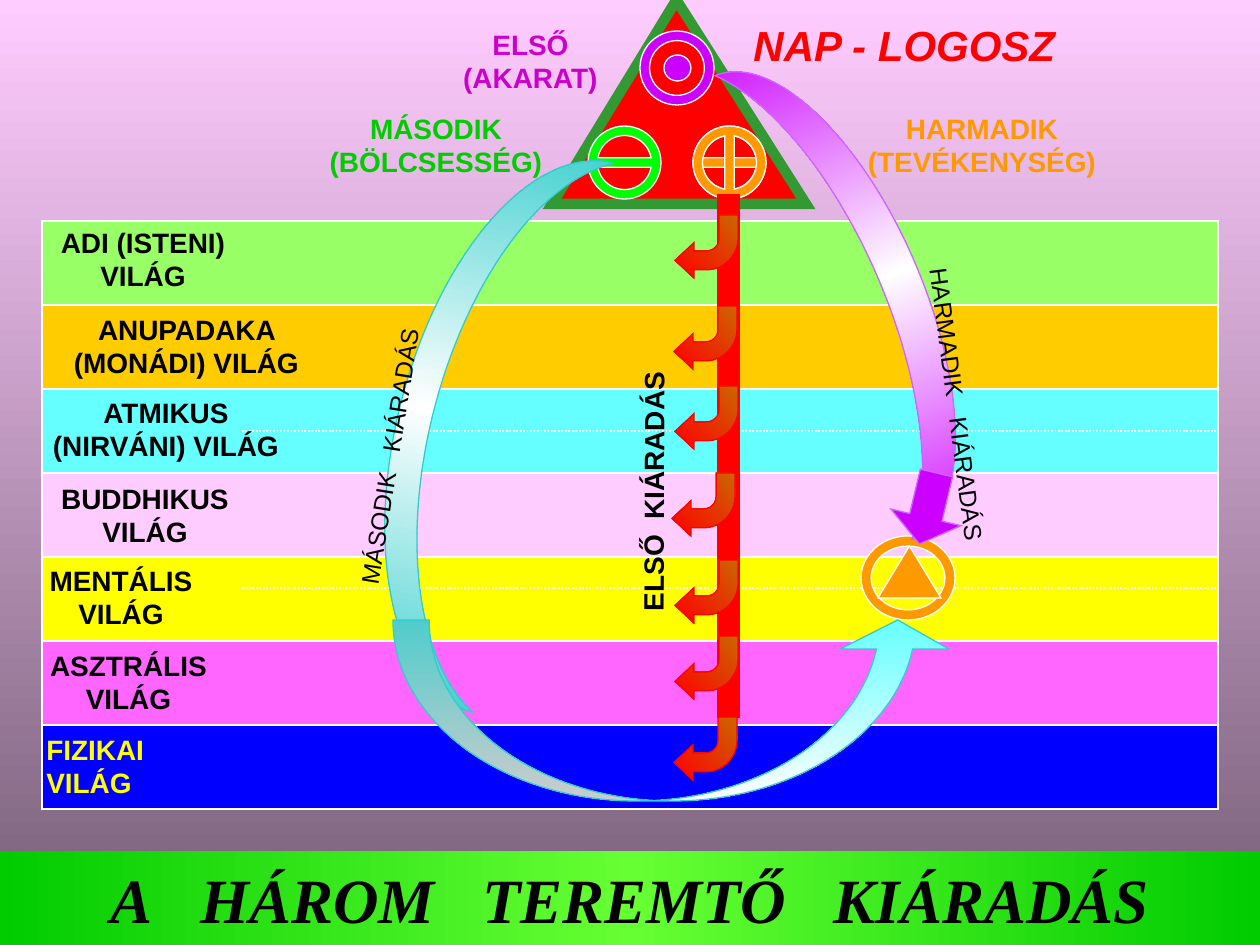
from lxml.etree import SubElement
from pptx import Presentation
from pptx.dml.color import RGBColor as RGB
from pptx.enum.dml import MSO_LINE
from pptx.enum.shapes import MSO_CONNECTOR, MSO_SHAPE as SHAPE
from pptx.enum.text import MSO_ANCHOR, PP_ALIGN as ALIGN
from pptx.oxml.ns import qn
from pptx.util import Pt

EMU_PER_PX = 914400 / 126

BLACK = RGB(0x00, 0x00, 0x00)
WHITE = RGB(0xFF, 0xFF, 0xFF)
RED = RGB(0xFF, 0x00, 0x00)
BROWN = RGB(0xCC, 0x66, 0x00)
ORANGE = RGB(0xFF, 0x99, 0x00)
AMBER = RGB(0xFF, 0xCC, 0x00)
YELLOW = RGB(0xFF, 0xFF, 0x00)
LIME = RGB(0x99, 0xFF, 0x66)
NEON = RGB(0x00, 0xFF, 0x00)
GREEN = RGB(0x00, 0xCC, 0x00)
BRIGHT_GREEN = RGB(0x66, 0xFF, 0x33)
FOREST = RGB(0x33, 0x99, 0x33)
AQUA = RGB(0x66, 0xFF, 0xFF)
TEAL = RGB(0x33, 0xCC, 0xCC)
BLUE = RGB(0x00, 0x00, 0xFF)
PINK = RGB(0xFF, 0xCC, 0xFF)
MAGENTA = RGB(0xFF, 0x66, 0xFF)
PURPLE = RGB(0xCC, 0x00, 0xCC)
VIOLET = RGB(0xCC, 0x00, 0xFF)
LILAC = RGB(0xCC, 0x66, 0xFF)
DUSK = RGB(0x76, 0x5E, 0x76)


def px(length):
    return round(length * EMU_PER_PX)


def write_text(frame, text, size=16, color=BLACK, font="Arial", bold=True,
               italic=False, align=ALIGN.CENTER, gap=0):
    paragraph = frame.paragraphs[0]
    paragraph.alignment = align
    pieces = text.replace(" ", "| |").split("|") if gap else [text]
    for piece in pieces:
        run = paragraph.add_run()
        run.text = piece
        run.font.name = font
        run.font.size = Pt(size)
        run.font.bold = bold
        run.font.italic = italic
        run.font.color.rgb = color
        if piece == " ":
            run.font._element.set("spc", str(round(gap * 100)))


def paint_gradient(fill, element, colors, angle):
    fill.gradient()
    fill.gradient_angle = -angle % 360
    stops = element.xpath(".//a:gsLst")[0]
    for stop in list(stops):
        stops.remove(stop)
    for index, color in enumerate(colors):
        position = round(100000 * index / (len(colors) - 1))
        stop = SubElement(stops, qn("a:gs"), pos=str(position))
        SubElement(stop, qn("a:srgbClr"), val=str(color))


class Board:
    def __init__(self, deck):
        self.slide = deck.slides.add_slide(deck.slide_layouts[6])
        self.shapes = self.slide.shapes
        self.outline = WHITE
        self.hairline = 0.75

    def background(self, *colors):
        paint_gradient(self.slide.background.fill, self.slide._element, colors, 90)

    def shape(self, kind, box, *colors, angle=90, line=None, width=None,
              rotation=0, adjust=(), mirrored=False):
        shape = self.shapes.add_shape(kind, *map(px, box))
        shape.shadow.inherit = False
        shape.rotation = rotation
        for index, value in enumerate(adjust):
            shape.adjustments[index] = value
        if mirrored:
            shape._element.spPr.find(qn("a:xfrm")).set("flipH", "1")
        if len(colors) > 1:
            paint_gradient(shape.fill, shape._element, colors, angle)
        else:
            shape.fill.solid()
            shape.fill.fore_color.rgb = colors[0]
        shape.line.color.rgb = line or self.outline
        shape.line.width = Pt(width or self.hairline)
        SubElement(shape._element.spPr.find(qn("a:ln")), qn("a:miter"), lim="800000")
        return shape

    def label(self, text, box, rotation=0, wrap=True, indent=0, **style):
        label = self.shapes.add_textbox(*map(px, box))
        label.rotation = rotation
        frame = label.text_frame
        frame.word_wrap = wrap
        if indent:
            frame.margin_left = px(indent)
        write_text(frame, text, **style)

    def dotted_line(self, left, right, y):
        line = self.shapes.add_connector(MSO_CONNECTOR.STRAIGHT,
                                         px(left), px(y), px(right), px(y))
        line.line.color.rgb = self.outline
        line.line.width = Pt(1)
        line.line.dash_style = MSO_LINE.ROUND_DOT
        SubElement(line._element.spPr, qn("a:effectLst"))

    def banner(self, text, box, *colors, **style):
        banner = self.shape(SHAPE.RECTANGLE, box, *colors, angle=0)
        banner.line.fill.background()
        banner.text_frame.vertical_anchor = MSO_ANCHOR.MIDDLE
        banner.text_frame.word_wrap = True
        write_text(banner.text_frame, text, **style)


def draw_worlds(board):
    worlds = [
        ("ADI (ISTENI) VILÁG", LIME, (34, 219, 218)),
        ("ANUPADAKA (MONÁDI) VILÁG", AMBER, (34, 306, 305)),
        ("ATMIKUS (NIRVÁNI) VILÁG", AQUA, (35, 389, 262)),
        ("BUDDHIKUS VILÁG", PINK, (38, 475, 214)),
        ("MENTÁLIS VILÁG", YELLOW, (33, 557, 176)),
        ("ASZTRÁLIS VILÁG", MAGENTA, (34, 642, 189)),
        ("FIZIKAI VILÁG", BLUE, (34, 726, 189)),
    ]
    band = 84
    for index, (name, color, place) in enumerate(worlds):
        board.shape(SHAPE.RECTANGLE,
                    (42, 221 + band * index, 1176, band * (len(worlds) - index)), color)
    for y in (431, 588):
        board.dotted_line(242, 1218, y)
    for name, color, place in worlds:
        lowest = color == BLUE
        board.label(name, (*place, 81), color=YELLOW if lowest else BLACK,
                    align=ALIGN.LEFT if lowest else ALIGN.CENTER)


def draw_logos(board):
    board.shape(SHAPE.ISOSCELES_TRIANGLE, (552, 0, 254, 204), RED,
                line=FOREST, width=6, adjust=[0.49])
    board.shape(SHAPE.DONUT, (640, 31, 74, 74), VIOLET, adjust=[0.13])
    board.shape(SHAPE.OVAL, (664, 55, 27, 26), VIOLET)
    for left, color, rotation in ((588, NEON, 315), (693, ORANGE, 315), (693, ORANGE, 225)):
        board.shape(SHAPE.NO_SYMBOL, (left, 126, 73, 73), color,
                    rotation=rotation, adjust=[0.13])
    board.shape(SHAPE.DONUT, (861, 536, 94, 84), ORANGE, adjust=[0.12])
    board.shape(SHAPE.ISOSCELES_TRIANGLE, (878, 546, 63, 52), ORANGE)
    board.label("ELSŐ (AKARAT)", (441, 21, 179, 81), color=PURPLE)
    board.label("MÁSODIK (BÖLCSESSÉG)", (315, 105, 242, 81), color=GREEN)
    board.label("HARMADIK (TEVÉKENYSÉG)", (851, 105, 262, 81), color=ORANGE)
    board.label("NAP - LOGOSZ", (741, 13, 373, 63), size=24, color=RED,
                italic=True, align=ALIGN.LEFT)


def draw_outpourings(board):
    board.shape(SHAPE.MOON, (809, 34, 111, 504), VIOLET, WHITE, VIOLET, line=LILAC,
                rotation=337, adjust=[0.36], mirrored=True)
    board.shape(SHAPE.DOWN_ARROW, (892, 472, 72, 73), VIOLET, line=LILAC,
                rotation=13.4, adjust=[0.46, 0.38])
    board.shape(SHAPE.MOON, (399, 136, 147, 567), TEAL, WHITE, TEAL, line=TEAL,
                rotation=14.4, adjust=[0.23])
    board.shape(SHAPE.CURVED_RIGHT_ARROW, (582, 431, 181, 559), AQUA, WHITE, angle=180,
                line=TEAL, rotation=270, adjust=[0.2, 0.6, 0.16])

    board.shape(SHAPE.RECTANGLE, (718, 195, 21, 522), RED, line=RED)
    branches = [(675, 215), (674, 306), (675, 386), (672, 473),
                (675, 560), (675, 636), (674, 717)]
    for left, top in branches:
        board.shape(SHAPE.BENT_ARROW, (left, top, 63, 63), BROWN, RED, angle=315,
                    line=RED, rotation=180, adjust=[0.3, 0.28, 0.3, 0.5])

    board.label("ELSŐ KIÁRADÁS", (480, 465, 347, 47), rotation=270.2, indent=51,
                align=ALIGN.LEFT, gap=4.45)
    board.label("MÁSODIK KIÁRADÁS", (227, 413, 377, 95), rotation=279.1, wrap=False,
                size=14, bold=False, gap=7.8)
    board.label("HARMADIK KIÁRADÁS", (796, 374, 301, 63), rotation=82.5, wrap=False,
                size=14, bold=False, gap=7.8)


def main():
    deck = Presentation()
    deck.slide_width, deck.slide_height = px(1260), px(945)
    board = Board(deck)
    board.background(PINK, DUSK)
    draw_worlds(board)
    draw_logos(board)
    draw_outpourings(board)
    board.banner("A HÁROM TEREMTŐ KIÁRADÁS", (0, 851, 1260, 94),
                 GREEN, BRIGHT_GREEN, GREEN, size=36, font="Times New Roman",
                 italic=True, gap=18)
    deck.save("out.pptx")


if __name__ == "__main__":
    main()
